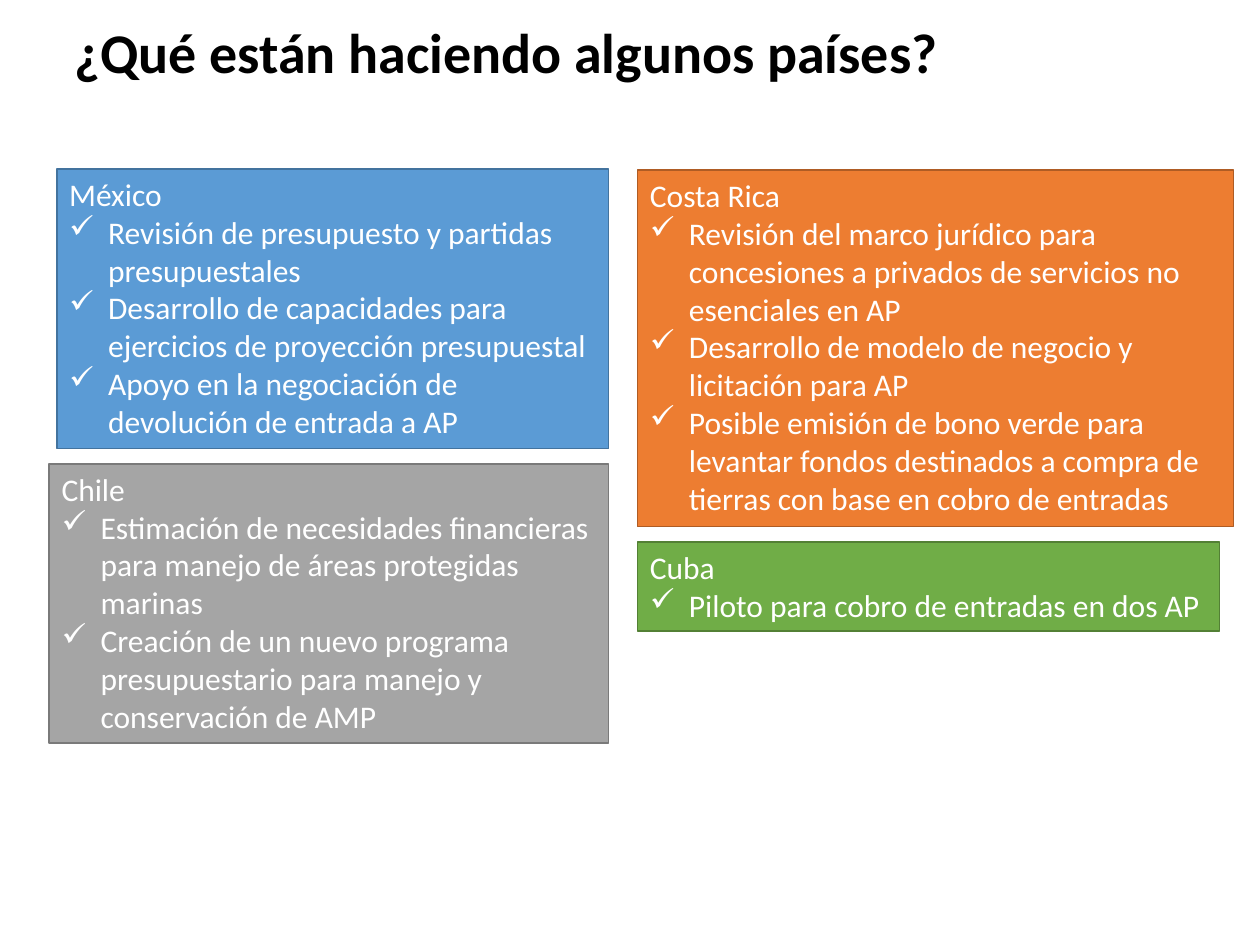
import pptx
import pptx.dml.color
import pptx.enum.shapes
import pptx.enum.text
import pptx.oxml.ns
import pptx.util
from lxml import etree

Inches = pptx.util.Inches
TITLE = "¿Qué están haciendo algunos países?"
COLORS = {
    "title": "000000", "text": "FFFFFF",
    "México": ("5B9BD5", "43739E"),
    "Costa Rica": ("ED7D31", "AF5C24"),
    "Chile": ("A5A5A5", "7A7A7A"),
    "Cuba": ("70AD47", "538035"),
}
COUNTRIES = [
    ("México", (0.45, 1.34, 4.38, 2.22), True, [
        "Revisión de presupuesto y partidas presupuestales",
        "Desarrollo de capacidades para ejercicios de proyección presupuestal",
        "Apoyo en la negociación de devolución de entrada a AP",
    ]),
    ("Costa Rica", (5.06, 1.35, 4.73, 2.83), True, [
        "Revisión del marco jurídico para concesiones a privados de servicios no esenciales en AP",
        "Desarrollo de modelo de negocio y licitación para AP",
        "Posible emisión de bono verde para levantar fondos destinados a compra de tierras "
        "con base en cobro de entradas",
    ]),
    ("Chile", (0.39, 3.68, 4.44, 2.22), True, [
        "Estimación de necesidades financieras para manejo de áreas protegidas marinas",
        "Creación de un nuevo programa presupuestario para manejo y conservación de AMP",
    ]),
    ("Cuba", (5.06, 4.3, 4.62, 0.71), False, ["Piloto para cobro de entradas en dos AP"]),
]
TITLE_FONT = {"name": "Calibri", "size": pptx.util.Pt(32), "bold": True}
BODY_FONT = {"name": "Calibri", "size": pptx.util.Pt(18)}
BULLET_INDENT = Inches(0.31)


def rgb(value):
    return pptx.dml.color.RGBColor.from_string(value)


def set_attributes(target, values):
    for name, value in values.items():
        setattr(target, name, value)


def write(paragraph, text, font, color):
    run = paragraph.add_run()
    run.text = text
    set_attributes(run.font, font)
    run.font.color.rgb = rgb(color)
    paragraph.alignment = pptx.enum.text.PP_ALIGN.LEFT


def add_bullet(paragraph):
    properties = paragraph._p.get_or_add_pPr()
    properties.set("marL", str(BULLET_INDENT))
    properties.set("indent", str(-BULLET_INDENT))
    etree.SubElement(properties, pptx.oxml.ns.qn("a:buChar")).set("char", "✓")


def add_title(slide):
    box = slide.shapes.add_textbox(*map(Inches, (0.49, 0, 9.02, 0.88)))
    set_attributes(box.text_frame, {
        "word_wrap": True,
        "vertical_anchor": pptx.enum.text.MSO_ANCHOR.MIDDLE,
    })
    paragraph = box.text_frame.paragraphs[0]
    paragraph.line_spacing = 0.9
    write(paragraph, TITLE, TITLE_FONT, COLORS["title"])


def add_country(slide, country, place, wraps, actions):
    shape = slide.shapes.add_shape(
        pptx.enum.shapes.MSO_SHAPE.RECTANGLE, *map(Inches, place))
    fill, line = COLORS[country]
    shape.shadow.inherit = False
    shape.fill.solid()
    shape.fill.fore_color.rgb = rgb(fill)
    shape.line.color.rgb = rgb(line)
    shape.line.width = pptx.util.Pt(1)
    frame = shape.text_frame
    set_attributes(frame, {
        "word_wrap": wraps,
        "auto_size": pptx.enum.text.MSO_AUTO_SIZE.SHAPE_TO_FIT_TEXT,
        "vertical_anchor": pptx.enum.text.MSO_ANCHOR.TOP,
    })
    write(frame.paragraphs[0], country, BODY_FONT, COLORS["text"])
    for action in actions:
        paragraph = frame.add_paragraph()
        add_bullet(paragraph)
        write(paragraph, action, BODY_FONT, COLORS["text"])


def main():
    presentation = pptx.Presentation()
    set_attributes(presentation, {"slide_width": Inches(10), "slide_height": Inches(7.5)})
    slide = presentation.slides.add_slide(presentation.slide_layouts[6])
    add_title(slide)
    for country in COUNTRIES:
        add_country(slide, *country)
    presentation.save("out.pptx")


if __name__ == "__main__":
    main()
